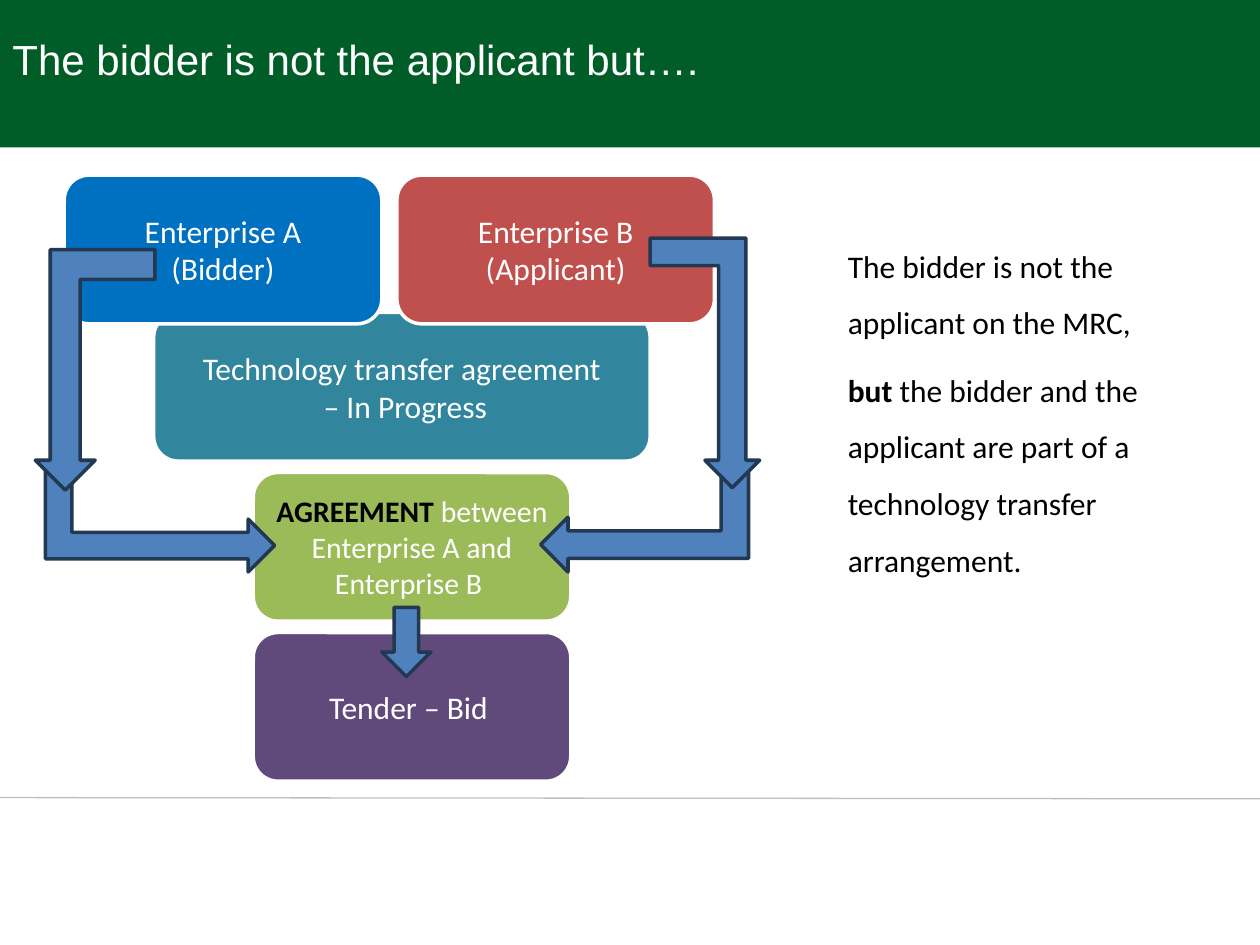
from lxml import etree
from pptx import Presentation
from pptx.dml.color import RGBColor
from pptx.enum.shapes import MSO_CONNECTOR, MSO_SHAPE
from pptx.enum.text import MSO_ANCHOR, PP_ALIGN
from pptx.oxml.ns import qn
from pptx.util import Inches, Pt

RECTANGLE, ROUNDED = MSO_SHAPE.RECTANGLE, MSO_SHAPE.ROUNDED_RECTANGLE
BENT_ARROW, RIGHT_ARROW = MSO_SHAPE.BENT_UP_ARROW, MSO_SHAPE.RIGHT_ARROW
STRAIGHT = MSO_CONNECTOR.STRAIGHT
MIDDLE, CENTER = MSO_ANCHOR.MIDDLE, PP_ALIGN.CENTER

COLORS = {
    "banner": "005D28", "divider": "BFBFBF", "white": "FFFFFF", "black": "000000",
    "transfer": "31859C", "bidder": "0070C0", "applicant": "C0504D",
    "agreement": "9BBB59", "tender": "604A7B", "arrow": "4F81BD", "arrow_edge": "233953",
}
BOX_FORMAT = {"word_wrap": True, "vertical_anchor": MIDDLE,
              "margin_left": Inches(0.05), "margin_right": Inches(0.05)}
BOX_PARAGRAPH = {"alignment": CENTER}
BODY_PARAGRAPH = {"line_spacing": 1.5, "space_after": Pt(6)}
BOX_WIDTH, BOX_HEIGHT = 2.52, 1.18


class FlowSlide:
    """Draws the elements of a bidder and applicant flow on one slide."""

    def __init__(self, slide, font="Calibri"):
        self.slide = slide
        self.font = font

    def color(self, name):
        return RGBColor.from_string(COLORS[name])

    def shape(self, kind, frame, fill, edge=None):
        shape = self.slide.shapes.add_shape(kind, *map(Inches, frame))
        shape.shadow.inherit = False
        shape.fill.solid()
        shape.fill.fore_color.rgb = self.color(fill)
        if edge:
            shape.line.color.rgb = self.color(edge)
            shape.line.width = Pt(2)
        else:
            shape.line.fill.background()
        return shape

    def fill_text(self, frame, paragraphs, size, color, font=None, layout=None, indent=0):
        for index, runs in enumerate(paragraphs):
            paragraph = frame.add_paragraph() if index else frame.paragraphs[0]
            for name, value in (layout or {}).items():
                setattr(paragraph, name, value)
            if indent:
                properties = paragraph._p.get_or_add_pPr()
                properties.set("marL", str(Inches(indent)))
                properties.set("indent", "0")
            for wording, bold in runs:
                run = paragraph.add_run()
                run.text = wording
                style = {"name": font or self.font, "size": Pt(size), "bold": bold}
                for name, value in style.items():
                    setattr(run.font, name, value)
                run.font.color.rgb = self.color("black" if bold else color)

    def box(self, left, top, fill, paragraphs, width=BOX_WIDTH, size=18):
        shape = self.shape(ROUNDED, (left, top, width, BOX_HEIGHT), fill, "white")
        for name, value in BOX_FORMAT.items():
            setattr(shape.text_frame, name, value)
        self.fill_text(shape.text_frame, paragraphs, size, "white", layout=BOX_PARAGRAPH)

    def text(self, frame, paragraphs, size, color, **style):
        box = self.slide.shapes.add_textbox(*map(Inches, frame))
        box.text_frame.word_wrap = True
        self.fill_text(box.text_frame, paragraphs, size, color, **style)

    def arrow(self, kind, frame, rotation, mirrored=False):
        arrow = self.shape(kind, frame, "arrow", "arrow_edge")
        arrow.rotation = rotation
        if mirrored:
            arrow._element.spPr.find(qn("a:xfrm")).set("flipH", "1")

    def divider(self, start, end):
        line = self.slide.shapes.add_connector(STRAIGHT, *map(Inches, start + end))
        line.line.color.rgb = self.color("divider")
        line.line.width = Pt(0.75)
        etree.SubElement(line._element.spPr, qn("a:effectLst"))


def main():
    presentation = Presentation()
    presentation.slide_width, presentation.slide_height = Inches(10), Inches(7.5)
    flow = FlowSlide(presentation.slides.add_slide(presentation.slide_layouts[6]))

    flow.shape(RECTANGLE, (0, 0, 10, 1.17), "banner")
    flow.divider((0, 6.33), (10, 6.34))

    flow.box(1.22, 2.48, "transfer", [[("Technology transfer agreement", False)],
                                      [(" – In Progress", False)]], width=3.94)
    flow.text((6.13, 1.76, 3.42, 2.86), [
        [("The bidder is not the applicant on the MRC,", False)],
        [("but", True), (" the bidder and the applicant are part of a "
                         "technology transfer arrangement.", False)],
    ], 18, "black", layout=BODY_PARAGRAPH, indent=0.5)
    flow.box(0.51, 1.39, "bidder", [[("Enterprise A", False)], [("(Bidder)", False)]])
    flow.box(2.01, 3.75, "agreement", [[("AGREEMENT", True), (" between", False)],
                                       [("Enterprise A and Enterprise B ", False)]], size=17)
    flow.box(3.15, 1.39, "applicant", [[("Enterprise B (Applicant)", False)]])
    flow.box(2.01, 5.02, "tender", [[("Tender – Bid ", False)]])

    for kind, frame, rotation, mirrored in (
        (BENT_ARROW, (4.68, 3.28, 0.87, 1.65), 270, True),
        (BENT_ARROW, (5.16, 1.89, 0.87, 1.98), 180, True),
        (BENT_ARROW, (0.85, 3.21, 0.84, 1.82), 90, False),
        (BENT_ARROW, (0.28, 1.98, 0.95, 1.91), 180, False),
        (RIGHT_ARROW, (2.95, 4.9, 0.55, 0.39), 90, False),
    ):
        flow.arrow(kind, frame, rotation, mirrored)

    flow.text((0, 0.22, 7.99, 0.5), [[("The bidder is not the applicant but….", False)]],
              24, "white", font="Arial")
    presentation.save("out.pptx")


if __name__ == "__main__":
    main()
